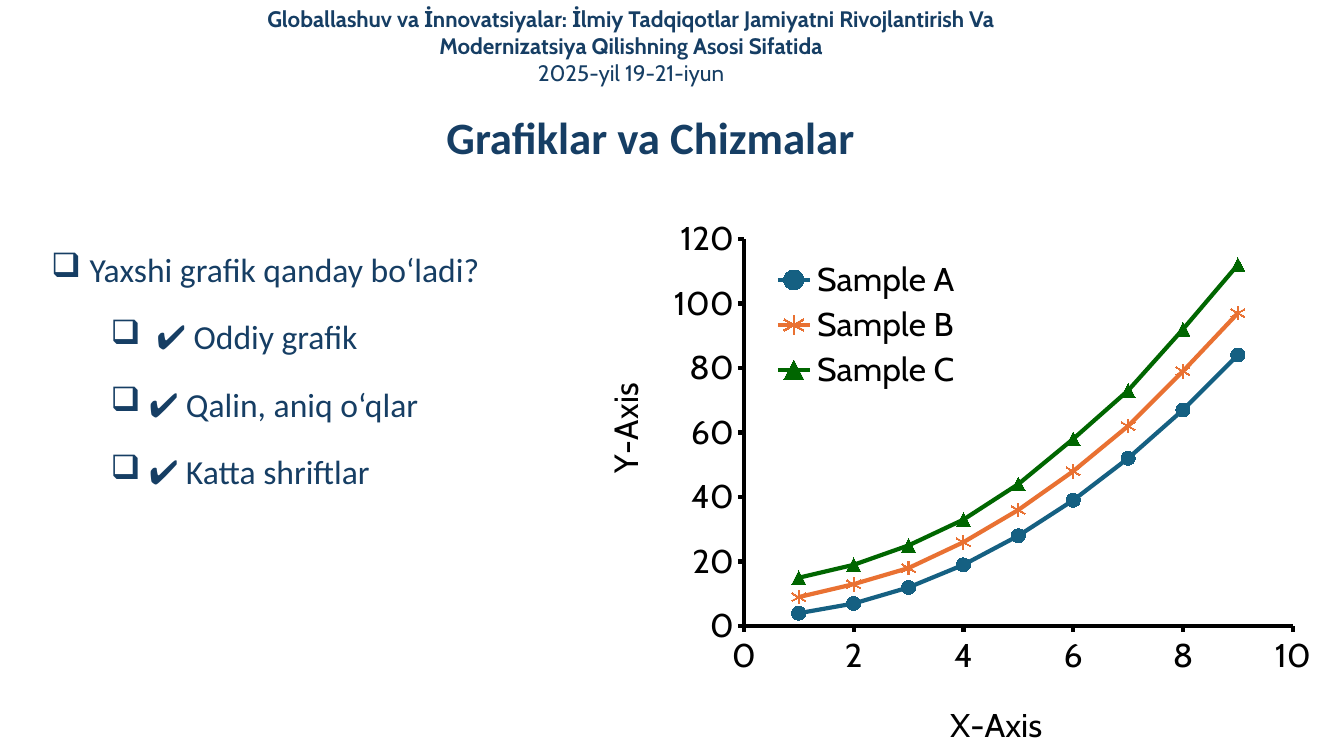
"""Builds the slide on graphs and drawings: header, title, bullet list and scatter chart."""
from dataclasses import dataclass

import lxml.etree
import pptx
import pptx.chart.data
import pptx.dml.color
import pptx.enum.chart
import pptx.enum.text
import pptx.oxml
import pptx.oxml.ns
import pptx.util

qn = pptx.oxml.ns.qn
Align = pptx.enum.text.PP_ALIGN
Marker = pptx.enum.chart.XL_MARKER_STYLE


@dataclass(frozen=True)
class Theme:
    navy: str = "163E64"
    black: str = "000000"
    white: str = "FFFFFF"
    blue: str = "156082"
    orange: str = "E97132"
    green: str = "006600"
    body_font: str = "Calibri"
    label_font: str = "Cabin"
    header: int = 16
    body: int = 24
    title: int = 32
    line: int = 3
    marker: int = 10


THEME = Theme()


def rgb(value):
    return pptx.dml.color.RGBColor.from_string(value)


def style_font(font, size, name, color, bold=False):
    font.size, font.name, font.bold = pptx.util.Pt(size), name, bold
    font.color.rgb = rgb(color)


def write(p, text, align=None, spacing=None, before=None, left=None, bullet=None, **font):
    p.alignment, p.line_spacing = align, spacing
    if before:
        p.space_before = pptx.util.Pt(before)
    if bullet:
        pPr = p._p.get_or_add_pPr()
        pPr.set("marL", str(pptx.util.Inches(left)))
        pPr.set("indent", str(pptx.util.Inches(-0.38)))
        lxml.etree.SubElement(pPr, qn("a:buChar")).set("char", bullet)
    r = p.add_run()
    r.text = text
    style_font(r.font, **font)


def place(element, index, target=None, **shares):
    for old in element.findall(qn("c:layout")):
        element.remove(old)
    layout = lxml.etree.Element(qn("c:layout"))
    manual = lxml.etree.SubElement(layout, qn("c:manualLayout"))
    settings = {"layoutTarget": target} if target else {}
    settings.update(xMode="edge", yMode="edge", **shares)
    for tag, value in settings.items():
        lxml.etree.SubElement(manual, qn(f"c:{tag}")).set("val", str(value))
    element.insert(index, layout)


class Deck:
    """Holds the theme and current slide, measured on an 80 by 45 grid."""

    def __init__(self, theme):
        self.theme = theme
        self.prs = pptx.Presentation()
        self.prs.slide_width = pptx.util.Inches(13.33)
        self.prs.slide_height = pptx.util.Inches(7.5)
        self.s = self.prs.slides.add_slide(self.prs.slide_layouts[6])

    def grid(self, col, row, cols, rows):
        w, h = self.prs.slide_width / 80, self.prs.slide_height / 45
        return [round(v) for v in (col * w, row * h, cols * w, rows * h)]

    def text(self, box, paragraphs, anchor=pptx.enum.text.MSO_ANCHOR.TOP, **common):
        tf = self.s.shapes.add_textbox(*self.grid(*box)).text_frame
        tf.word_wrap = True
        tf.vertical_anchor = anchor
        for i, (text, fmt) in enumerate(paragraphs):
            p = tf.add_paragraph() if i else tf.paragraphs[0]
            write(p, text, **{**common, **fmt})

    def axis(self, axis, title, top, step, x, y):
        t = self.theme
        label = dict(size=t.body, name=t.label_font, color=t.black)
        axis.minimum_scale, axis.maximum_scale, axis.major_unit = 0, top, step
        axis.has_major_gridlines = False
        axis.major_tick_mark = pptx.enum.chart.XL_TICK_MARK.OUTSIDE
        axis.minor_tick_mark = pptx.enum.chart.XL_TICK_MARK.NONE
        axis.format.line.color.rgb = rgb(t.black)
        axis.format.line.width = pptx.util.Pt(t.line)
        style_font(axis.tick_labels.font, **label)
        write(axis.axis_title.text_frame.paragraphs[0], title, **label)
        place(axis.axis_title._element, 1, x=x, y=y)

    def scatter(self, box, samples):
        t = self.theme
        data = pptx.chart.data.XyChartData()
        for name, _, _, values in samples:
            series = data.add_series(name)
            for x, y in enumerate(values, 1):
                series.add_data_point(x, y)
        kind = pptx.enum.chart.XL_CHART_TYPE.XY_SCATTER_SMOOTH
        chart = self.s.shapes.add_chart(kind, *self.grid(*box), data).chart
        chart.has_title = False
        style_font(chart.font, 10, t.label_font, t.black)
        self.chart_fill(chart)
        plot = chart.plots[0]
        plot.vary_by_categories = False
        for series, (_, color, marker, _) in zip(plot.series, samples):
            series.smooth = True
            series.marker.style, series.marker.size = marker, t.marker
            series.marker.format.fill.solid()
            series.marker.format.fill.fore_color.rgb = rgb(color)
            series.marker.format.line.color.rgb = rgb(color)
            series.format.line.color.rgb = rgb(color)
            series.format.line.width = pptx.util.Pt(t.line)
        self.axis(chart.category_axis, "X-Axis", 10, 2, 0.49, 0.91)
        self.axis(chart.value_axis, "Y-Axis", 120, 20, 0.02, 0.32)
        chart.has_legend = True
        chart.legend.position = pptx.enum.chart.XL_LEGEND_POSITION.RIGHT
        chart.legend.include_in_layout = False
        style_font(chart.legend.font, t.body, t.label_font, t.black)
        place(chart.legend._element, 1, x=0.26, y=0.09, w=0.25, h=0.26)
        area = chart._chartSpace.chart.plotArea
        place(area, 0, "inner", x=0.22, y=0.06, w=0.74, h=0.72)

    def chart_fill(self, chart):
        sp = lxml.etree.Element(qn("c:spPr"))
        fill = lxml.etree.SubElement(sp, qn("a:solidFill"))
        color = lxml.etree.SubElement(fill, qn("a:srgbClr"), val=self.theme.white)
        lxml.etree.SubElement(color, qn("a:alpha"), val="83000")
        line = lxml.etree.SubElement(sp, qn("a:ln"))
        lxml.etree.SubElement(line, qn("a:noFill"))
        chart._chartSpace.chart.addnext(sp)


def main():
    t = THEME
    deck = Deck(t)
    deck.text(
        (12, 0, 51.12, 5.46),
        [("Globallashuv va İnnovatsiyalar: İlmiy Tadqiqotlar Jamiyatni Rivojlantirish Va "
          "Modernizatsiya Qilishning Asosi Sifatida", {"bold": True}),
         ("2025-yil 19-21-iyun", {})],
        align=Align.CENTER, size=t.header, name=t.label_font, color=t.navy)
    deck.scatter((34.56, 12.3, 44.16, 32.7), [
        ("Sample A", t.blue, Marker.CIRCLE, (4, 7, 12, 19, 28, 39, 52, 67, 84)),
        ("Sample B", t.orange, Marker.STAR, (9, 13, 18, 26, 36, 48, 62, 79, 97)),
        ("Sample C", t.green, Marker.TRIANGLE, (15, 19, 25, 33, 44, 58, 73, 92, 112)),
    ])
    points = (" ✔ Oddiy grafik", "✔ Qalin, aniq o‘qlar", "✔ Katta shriftlar")
    deck.text(
        (0, 13.32, 30.66, 16.5),
        [("Yaxshi grafik qanday bo‘ladi?", {"left": 0.79})]
        + [(point, {"left": 1.38, "before": 5}) for point in points],
        align=Align.JUSTIFY, spacing=1.5, bullet="❑",
        size=t.body, name=t.body_font, color=t.navy)
    deck.text(
        (6.12, 5.94, 65.22, 4.8), [("Grafiklar va Chizmalar", {})],
        anchor=pptx.enum.text.MSO_ANCHOR.MIDDLE, align=Align.CENTER, spacing=0.9,
        size=t.title, name=t.body_font, color=t.navy, bold=True)
    deck.prs.save("out.pptx")


if __name__ == "__main__":
    main()
